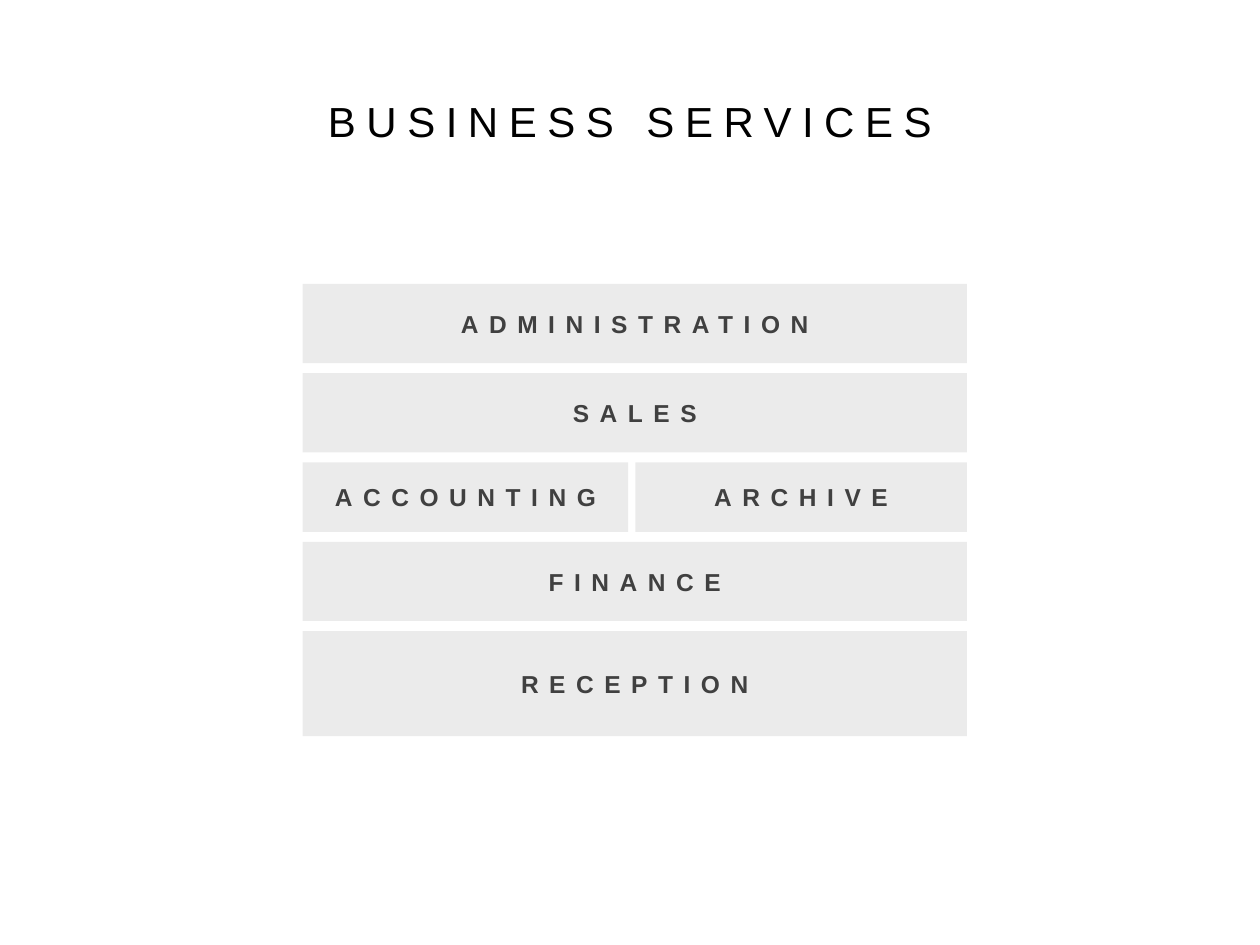
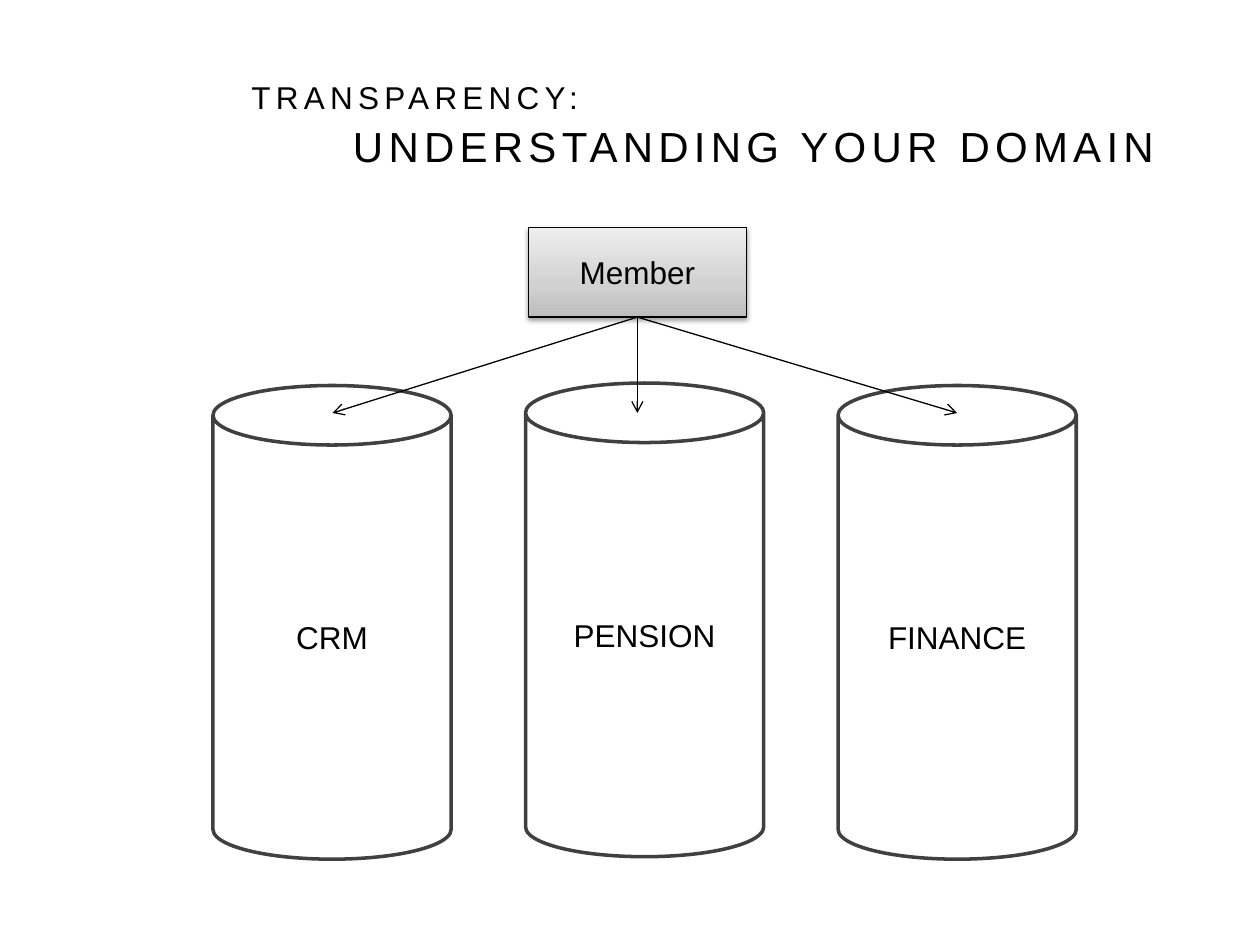
from copy import deepcopy
from dataclasses import dataclass

from lxml import etree
from pptx import Presentation
from pptx.dml.color import RGBColor
from pptx.enum import shapes, text
from pptx.oxml import parse_xml
from pptx.oxml.ns import nsdecls, qn
from pptx.util import Pt


@dataclass(frozen=True)
class Theme:
    font: str = "Arial"
    black: str = "000000"
    dark: str = "404040"
    white: str = "FFFFFF"
    member_stops: tuple = ((0, "BDBDBD"), (0.35, "D1D1D1"), (1, "EEEEEE"))
    service_opacity: int = 8
    title_size: int = 24
    label_size: int = 18
    service_size: int = 14
    thin: float = 0.75
    thick: float = 2


THEME = Theme()
TITLE_ONLY = 5


def write(paragraph, wording, *, size, color=THEME.black, bold=False,
          spacing=0, align=text.PP_ALIGN.CENTER):
    paragraph.alignment = align
    run = paragraph.add_run()
    run.text = wording
    font = run.font
    font.name, font.size, font.bold = THEME.font, Pt(size), bold
    font.color.rgb = RGBColor.from_string(color)
    if spacing:
        run._r.get_or_add_rPr().set("spc", str(spacing * 100))


def indent(paragraph, points):
    properties = paragraph._p.get_or_add_pPr()
    properties.set("marL", str(Pt(points)))
    properties.set("indent", "0")


def place_title(slide, top_inset):
    """Position the title and return its empty text frame."""
    title = slide.shapes.title
    title.left, title.top, title.width, title.height = Pt(36), Pt(21.6), Pt(648), Pt(90)
    frame = title.text_frame
    frame.word_wrap = True
    frame.auto_size = text.MSO_AUTO_SIZE.NONE
    frame.vertical_anchor = text.MSO_ANCHOR.MIDDLE
    frame.margin_top = Pt(top_inset)
    return frame


def add_block(slide, kind, left, top, width, height, label, **label_format):
    block = slide.shapes.add_shape(kind, Pt(left), Pt(top), Pt(width), Pt(height))
    block.shadow.inherit = False
    frame = block.text_frame
    frame.word_wrap = True
    frame.vertical_anchor = text.MSO_ANCHOR.MIDDLE
    write(frame.paragraphs[0], label, **label_format)
    return block


def paint_line(line, color, width):
    line.color.rgb = RGBColor.from_string(color)
    line.width = Pt(width)


def add_service(slide, left, top, width, height, label):
    service = add_block(slide, shapes.MSO_SHAPE.RECTANGLE, left, top, width, height,
                        label, size=THEME.service_size, color=THEME.dark,
                        bold=True, spacing=6)
    service.line.fill.background()
    service.fill.solid()
    service.fill.fore_color.rgb = RGBColor.from_string(THEME.black)
    tint = service._element.spPr.find(qn("a:solidFill"))[0]
    etree.SubElement(tint, qn("a:alpha"), val=str(THEME.service_opacity * 1000))


def add_system(slide, left, top, width, height, label):
    system = add_block(slide, shapes.MSO_SHAPE.CAN, left, top, width, height,
                       label, size=THEME.label_size)
    system.fill.solid()
    system.fill.fore_color.rgb = RGBColor.from_string(THEME.white)
    paint_line(system.line, THEME.dark, THEME.thick)


def add_member(slide, left, top, width, height):
    member = add_block(slide, shapes.MSO_SHAPE.RECTANGLE, left, top, width, height,
                       "Member", size=THEME.label_size)
    paint_line(member.line, THEME.black, THEME.thin)
    member.fill.gradient()
    member.fill.gradient_angle = 90
    properties = member._element.spPr
    stop_list = properties.find(qn("a:gradFill")).find(qn("a:gsLst"))
    stop_list.insert(1, deepcopy(stop_list[0]))
    for stop, (position, color) in zip(member.fill.gradient_stops, THEME.member_stops):
        stop.position = position
        stop.color.rgb = RGBColor.from_string(color)
    properties.find(qn("a:effectLst")).append(parse_xml(
        f'<a:outerShdw {nsdecls("a")} blurRad="{Pt(3.1)}" dist="{Pt(1.6)}" '
        f'dir="5400000" rotWithShape="0"><a:srgbClr val="{THEME.black}">'
        '<a:alpha val="38000"/></a:srgbClr></a:outerShdw>'))
    return member


def add_arrow(slide, source, target_x, target_y):
    """Draw an arrow from the bottom centre of source to the target point."""
    arrow = slide.shapes.add_connector(shapes.MSO_CONNECTOR.STRAIGHT, source.left,
                                       source.top, Pt(target_x), Pt(target_y))
    arrow.begin_connect(source, 2)
    paint_line(arrow.line, THEME.black, THEME.thin)
    etree.SubElement(arrow.line._get_or_add_ln(), qn("a:tailEnd"), type="arrow")
    etree.SubElement(arrow._element.spPr, qn("a:effectLst"))


def build_services(slide):
    heading = place_title(slide, top_inset=8)
    write(heading.paragraphs[0], "BUSINESS SERVICES", size=THEME.title_size, spacing=6)

    left, top, full_width, row_gap = 173, 162.2, 379.5, 5.7
    first_width, column_gap = 186, 4
    rows = [
        (45.3, ["ADMINISTRATION"]),
        (45.3, ["SALES"]),
        (39.7, ["ACCOUNTING", "ARCHIVE"]),
        (45.3, ["FINANCE"]),
        (60, ["RECEPTION"]),
    ]
    for height, labels in rows:
        if len(labels) == 1:
            add_service(slide, left, top, full_width, height, labels[0])
        else:
            offset = first_width + column_gap
            add_service(slide, left, top, first_width, height, labels[0])
            add_service(slide, left + offset, top, full_width - offset, height, labels[1])
        top += height + row_gap


def build_domain(slide):
    heading = place_title(slide, top_inset=12.6)
    topic = heading.paragraphs[0]
    write(topic, "TRANSPARENCY:", size=THEME.label_size, spacing=3,
          align=text.PP_ALIGN.LEFT)
    indent(topic, 100.5)
    topic.space_after = Pt(2.5)
    subject = heading.add_paragraph()
    write(subject, "UNDERSTANDING YOUR DOMAIN", size=THEME.title_size, spacing=3,
          align=text.PP_ALIGN.LEFT)
    indent(subject, 158.5)
    subject.space_before = Pt(0)

    left, pitch, width, height = 121.7, 178.6, 136.1, 270.7
    systems = [("CRM", 220.3), ("PENSION", 218.9), ("FINANCE", 220.3)]
    for column, (label, top) in enumerate(systems):
        add_system(slide, left + column * pitch, top, width, height, label)

    member = add_member(slide, 301.8, 130, 124.8, 51.2)
    for target_x in (190, 364.2, 547):
        add_arrow(slide, member, target_x, 236)


def main():
    deck = Presentation()
    deck.slide_width, deck.slide_height = Pt(720), Pt(540)
    for build in (build_services, build_domain):
        build(deck.slides.add_slide(deck.slide_layouts[TITLE_ONLY]))
    deck.save("out.pptx")


if __name__ == "__main__":
    main()
